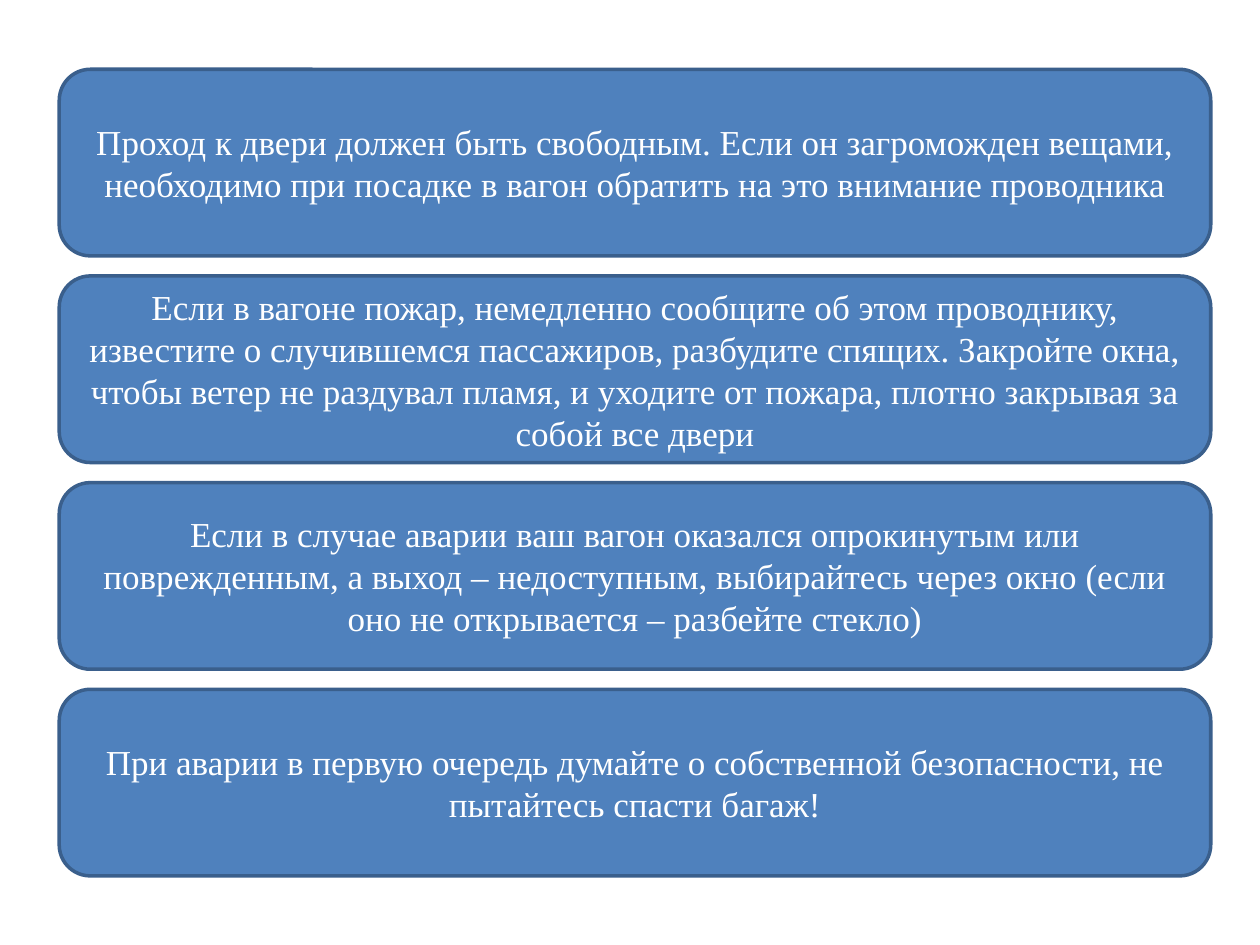
import pptx
import pptx.dml.color
import pptx.enum.shapes
import pptx.enum.text
import pptx.util
from dataclasses import dataclass

Pt = pptx.util.Pt
RGB = pptx.dml.color.RGBColor.from_string

# Content, top to bottom
SAFETY_RULES = [
    "Проход к двери должен быть свободным. Если он загроможден вещами, "
    "необходимо при посадке в вагон обратить на это внимание проводника",
    "Если в вагоне пожар, немедленно сообщите об этом проводнику, "
    "известите о случившемся пассажиров, разбудите спящих. Закройте окна, "
    "чтобы ветер не раздувал пламя, и уходите от пожара, плотно закрывая за "
    "собой все двери",
    "Если в случае аварии ваш вагон оказался опрокинутым или "
    "поврежденным, а выход – недоступным, выбирайтесь через окно (если "
    "оно не открывается – разбейте стекло)",
    "При аварии в первую очередь думайте о собственной безопасности, не "
    "пытайтесь спасти багаж!",
]


@dataclass(frozen=True)
class Theme:
    font: str = "Times New Roman"
    size: float = 20
    text: str = "FFFFFF"
    fill: str = "4F81BD"
    line: str = "3A5F8C"
    line_width: float = 2


THEME = Theme()

# Layout in points: one column of equal cards
LEFT, TOP, WIDTH, HEIGHT, GAP = 33.84, 39.6, 658, 106.6, 11.5


def add_rule(slide, index, rule):
    card = slide.shapes.add_shape(
        pptx.enum.shapes.MSO_SHAPE.ROUNDED_RECTANGLE,
        Pt(LEFT), Pt(TOP + index * (HEIGHT + GAP)), Pt(WIDTH), Pt(HEIGHT))
    card.shadow.inherit = False
    card.fill.solid()
    card.fill.fore_color.rgb = RGB(THEME.fill)
    card.line.color.rgb = RGB(THEME.line)
    card.line.width = Pt(THEME.line_width)

    # Centred wording
    frame = card.text_frame
    frame.word_wrap = True
    frame.vertical_anchor = pptx.enum.text.MSO_ANCHOR.MIDDLE
    frame.text = rule
    paragraph = frame.paragraphs[0]
    paragraph.alignment = pptx.enum.text.PP_ALIGN.CENTER
    paragraph.font.name = THEME.font
    paragraph.font.size = Pt(THEME.size)
    paragraph.font.color.rgb = RGB(THEME.text)


def main():
    deck = pptx.Presentation()
    deck.slide_width, deck.slide_height = Pt(720), Pt(540)
    slide = deck.slides.add_slide(deck.slide_layouts[6])  # blank layout
    for index, rule in enumerate(SAFETY_RULES):
        add_rule(slide, index, rule)
    deck.save("out.pptx")


if __name__ == "__main__":
    main()
